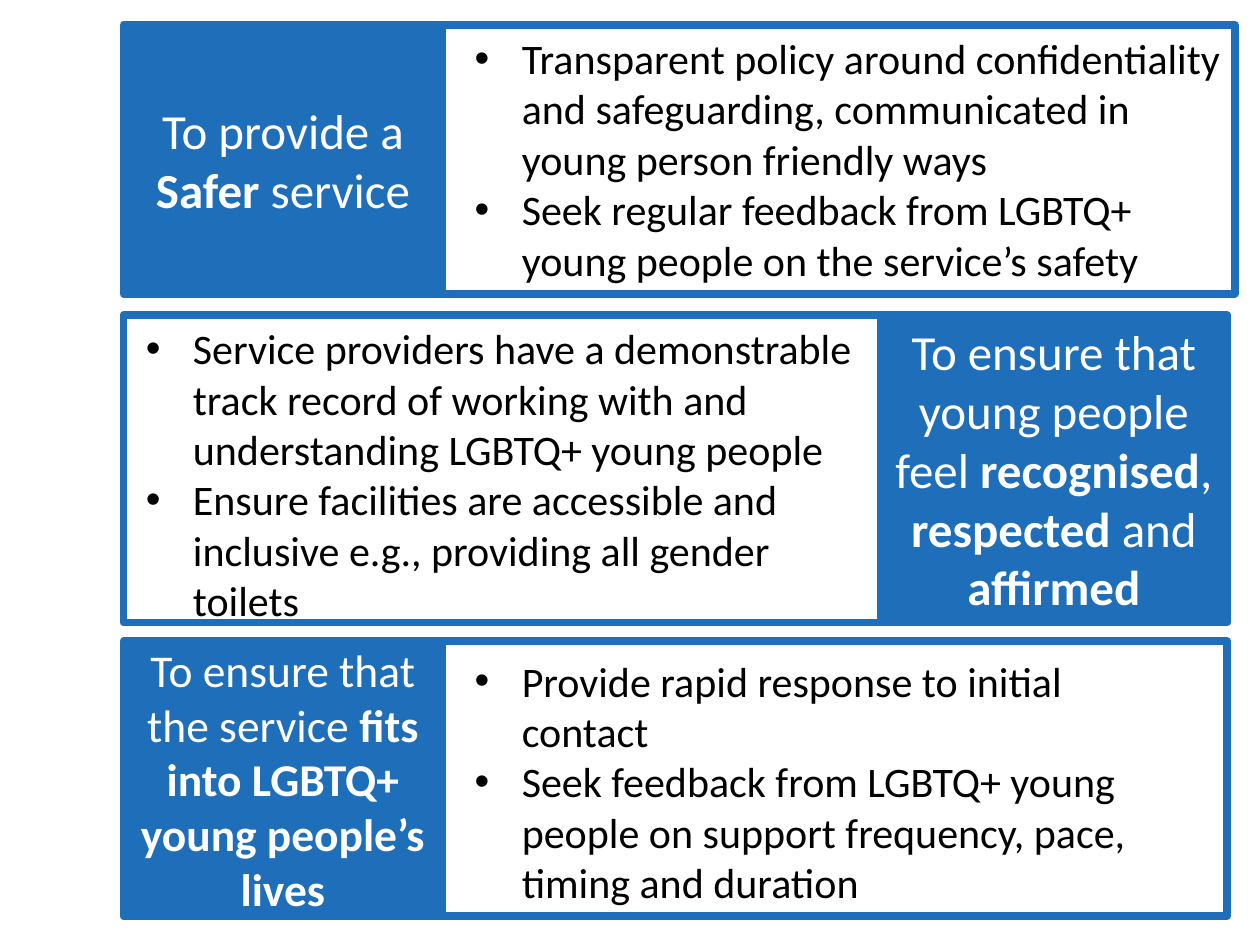
from dataclasses import dataclass

from lxml.etree import SubElement
from pptx import Presentation
from pptx.dml.color import RGBColor
from pptx.enum.shapes import MSO_SHAPE
from pptx.enum.text import MSO_ANCHOR, PP_ALIGN
from pptx.oxml.ns import qn
from pptx.util import Cm, Pt


@dataclass(frozen=True)
class Theme:
    font: str = "Calibri"
    blue: RGBColor = RGBColor(0x1F, 0x6E, 0xB9)
    white: RGBColor = RGBColor(0xFF, 0xFF, 0xFF)
    black: RGBColor = RGBColor(0, 0, 0)
    border: Pt = Pt(4.5)
    bullet_size: Pt = Pt(24)


THEME = Theme()
INDENT = Cm(0.95)


@dataclass(frozen=True)
class Aim:
    """One row; spans are (left, width) in cm, goal runs are (text, bold)."""
    top: float
    height: float
    frame: tuple
    goal_span: tuple
    goal: tuple
    goal_size: int
    actions_box: tuple
    actions: tuple


AIMS = (
    Aim(
        0.51, 5.41, (7.19, 17.7), (2.49, 6.43),
        (("To provide a ", False), ("Safer", True), (" service", False)), 28,
        (9.32, 0.53, 15.6, 4.85),
        ("Transparent policy around confidentiality and safeguarding, "
         "communicated in young person friendly ways",
         "Seek regular feedback from LGBTQ+ young people on the service’s safety"),
    ),
    Aim(
        6.35, 6.2, (2.49, 17.7), (17.75, 6.99),
        (("To ensure that young people feel ", False), ("recognised", True),
         (", ", False), ("respected", True), (" and ", False),
         ("affirmed", True)), 28,
        (2.69, 6.38, 15.01, 6.76),
        ("Service providers have a demonstrable track record of working with "
         "and understanding LGBTQ+ young people",
         "Ensure facilities are accessible and inclusive e.g., providing all "
         "gender toilets"),
    ),
    Aim(
        12.93, 5.54, (7.04, 17.7), (2.49, 6.43),
        (("To ensure that the service ", False),
         ("fits into LGBTQ+ young people’s lives", True)), 26,
        (9.32, 13.08, 15.01, 4.85),
        ("Provide rapid response to initial contact",
         "Seek feedback from LGBTQ+ young people on support frequency, pace, "
         "timing and duration"),
    ),
)


def style_font(font, size, color):
    font.name = THEME.font
    font.size = size
    font.color.rgb = color


def add_box(slide, aim, span, filled):
    left, width = span
    s = slide.shapes.add_shape(
        MSO_SHAPE.RECTANGLE, Cm(left), Cm(aim.top), Cm(width), Cm(aim.height))
    s.shadow.inherit = False
    s.line.color.rgb = THEME.blue
    s.line.width = THEME.border
    if filled:
        s.fill.solid()
        s.fill.fore_color.rgb = THEME.blue
    else:
        s.fill.background()
    return s


def add_goal(slide, aim):
    tf = add_box(slide, aim, aim.goal_span, True).text_frame
    tf.word_wrap = True
    tf.vertical_anchor = MSO_ANCHOR.MIDDLE
    p = tf.paragraphs[0]
    p.alignment = PP_ALIGN.CENTER
    for text, bold in aim.goal:
        r = p.add_run()
        r.text = text
        r.font.bold = bold
        style_font(r.font, Pt(aim.goal_size), THEME.white)


def set_bullet(p):
    pPr = p._p.get_or_add_pPr()
    pPr.set("marL", str(INDENT))
    pPr.set("indent", str(-INDENT))
    SubElement(pPr, qn("a:buFont"), typeface="Arial")
    SubElement(pPr, qn("a:buChar"), char="•")


def add_actions(slide, aim):
    tf = slide.shapes.add_textbox(*map(Cm, aim.actions_box)).text_frame
    tf.word_wrap = True
    tf.text = "\n".join(aim.actions)
    for p in tf.paragraphs:
        set_bullet(p)
        style_font(p.runs[0].font, THEME.bullet_size, THEME.black)


def main():
    prs = Presentation()
    prs.slide_width, prs.slide_height = Cm(25.4), Cm(19.05)
    slide = prs.slides.add_slide(prs.slide_layouts[6])
    for aim in AIMS:
        add_box(slide, aim, aim.frame, False)
    for aim in AIMS:
        add_goal(slide, aim)
        add_actions(slide, aim)
    prs.save("out.pptx")


if __name__ == "__main__":
    main()
